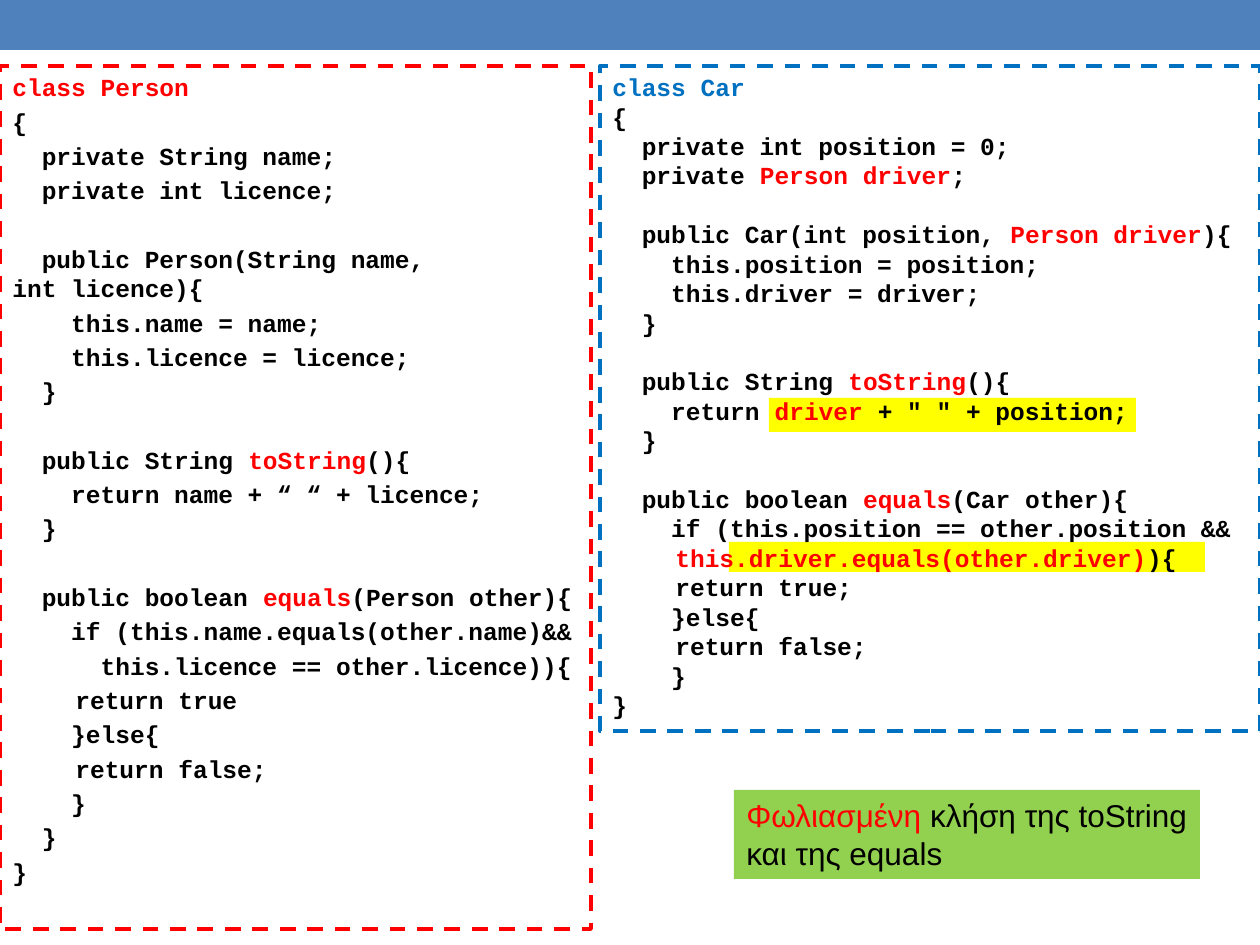
from pptx import Presentation
from pptx.dml.color import RGBColor
from pptx.enum.dml import MSO_LINE
from pptx.enum.shapes import MSO_SHAPE
from pptx.enum.text import MSO_ANCHOR, PP_ALIGN
from pptx.util import Pt

PX = 914400 // 126
BLACK = RGBColor(0x00, 0x00, 0x00)
RED = RGBColor(0xFF, 0x00, 0x00)
BLUE = RGBColor(0x00, 0x70, 0xC0)
HEADER = RGBColor(0x4F, 0x81, 0xBD)
YELLOW = RGBColor(0xFF, 0xFF, 0x00)
GREEN = RGBColor(0x92, 0xD0, 0x50)
LINE_PT = 16.8  # height of one code line

# Text between ~ marks is coloured; an empty line becomes spacing
PERSON = """~class Person~
{
  private String name;
  private int licence;

  public Person(String name,\t\t\tint licence){
    this.name = name;
    this.licence = licence;
  }

  public String ~toString~(){
    return name + “ “ + licence;
  }

  public boolean ~equals~(Person other){
    if (this.name.equals(other.name)&&
      this.licence == other.licence)){
\treturn true
    }else{
\treturn false;
    }
  }
}"""

CAR = """~class Car~
{
  private int position = 0;
  private ~Person driver~;

  public Car(int position, ~Person driver~){
    this.position = position;
    this.driver = driver;
  }

  public String ~toString~(){
    return ~driver~ + " " + position;
  }

  public boolean ~equals~(Car other){
    if (this.position == other.position &&
\t~this.driver.equals(other.driver)~){
\treturn true;
    }else{
\treturn false;
    }
}"""

prs = Presentation()
prs.slide_width, prs.slide_height = 1260 * PX, 945 * PX
s = prs.slides.add_slide(prs.slide_layouts[6])


def add_box(x, y, w, h, fill=None, line=None):
    sp = s.shapes.add_shape(MSO_SHAPE.RECTANGLE, x * PX, y * PX, w * PX, h * PX)
    sp.shadow.inherit = False
    if fill is None:
        sp.fill.background()
    else:
        sp.fill.solid()
        sp.fill.fore_color.rgb = fill
    if line is None:
        sp.line.fill.background()
    else:
        sp.line.color.rgb = line
        sp.line.width = Pt(2.25)
        sp.line.dash_style = MSO_LINE.DASH
    sp.text_frame.word_wrap = True
    sp.text_frame.vertical_anchor = MSO_ANCHOR.TOP
    return sp


def add_runs(p, text, accent, font, size, bold):
    p.alignment = PP_ALIGN.LEFT
    for i, part in enumerate(text.split("~")):
        if part:
            r = p.add_run()
            r.text = part
            r.font.name, r.font.size, r.font.bold = font, Pt(size), bold
            r.font.color.rgb = accent if i % 2 else BLACK


# Header band and the highlights behind the code
add_box(0, 0, 1260, 50, fill=HEADER)
add_box(769, 398, 367, 34, fill=YELLOW)
add_box(729, 542, 476, 30, fill=YELLOW)

# Code panels
for x, w, h, color, before, code in [
    (0, 591, 863, RED, 2.8, PERSON),
    (600, 660, 665, BLUE, 0, CAR),
]:
    tf = add_box(x, 66, w, h, line=color).text_frame
    gap = 0
    for i, text in enumerate(code.split("\n")):
        if not text:
            gap = LINE_PT + before
            continue
        p = tf.add_paragraph() if i else tf.paragraphs[0]
        p.space_before = Pt(before + gap)
        gap = 0
        add_runs(p, text, RED if i else color, "Courier New", 14, True)

# Note
tf = add_box(734, 790, 466, 89, fill=GREEN).text_frame
add_runs(tf.paragraphs[0], "~Φωλιασμένη~ κλήση της toString και της equals", RED, "Arial", 18, False)

prs.save("out.pptx")
